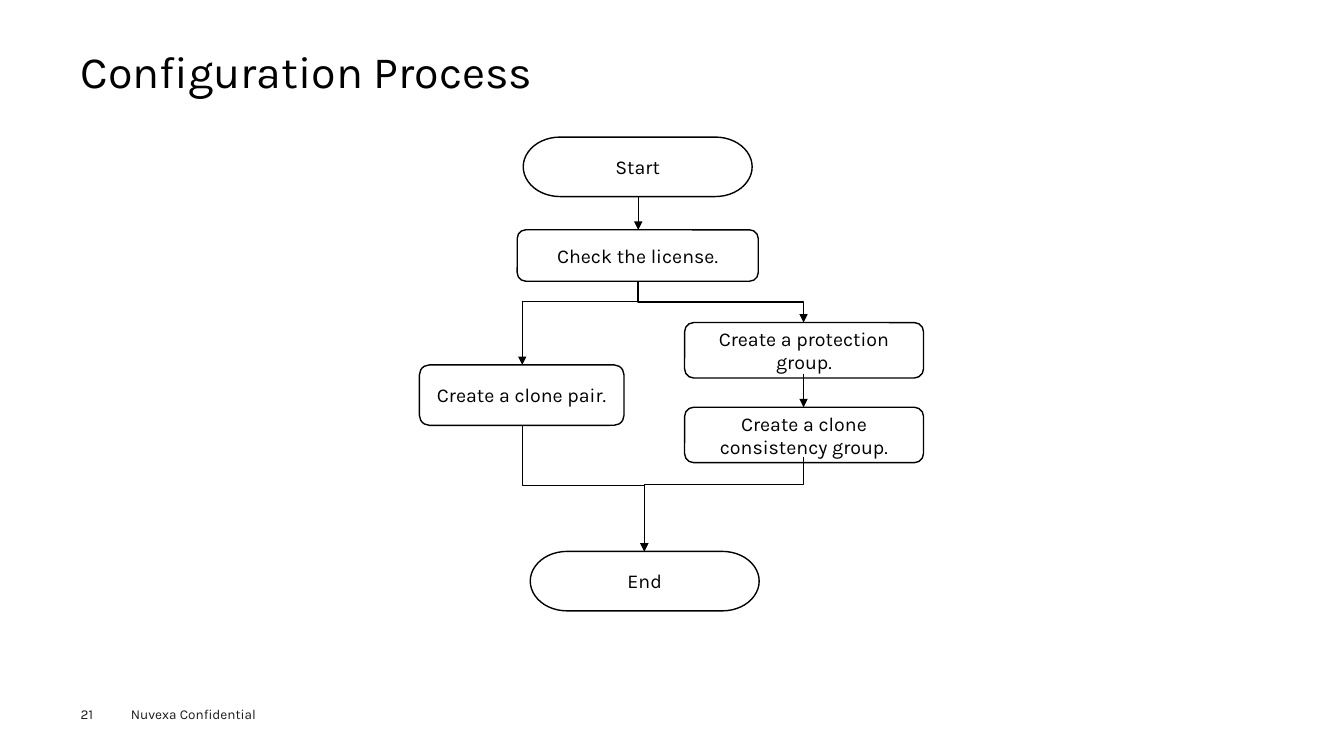
from lxml import etree
from pptx import Presentation
from pptx import util as u
from pptx.dml.color import RGBColor
from pptx.enum import shapes, text
from pptx.oxml import ns

PX = 9144
BLACK = RGBColor(0x00, 0x00, 0x00)
INK = RGBColor(0x1D, 0x1D, 0x1B)

prs = Presentation()
prs.slide_width, prs.slide_height = 1333 * PX, 750 * PX
s = prs.slides.add_slide(prs.slide_layouts[6])


def write(sp, words, size, color, **frame):
    tf = sp.text_frame
    tf.word_wrap = True
    for name, value in frame.items():
        setattr(tf, name, value)
    p = tf.paragraphs[0]
    r = p.add_run()
    r.text = words
    for name, value in {"name": "Karla", "size": u.Pt(size)}.items():
        setattr(r.font, name, value)
    r.font.color.rgb = color
    return p


def connect(kind, *ends):
    c = s.shapes.add_connector(kind, *[u.Emu(int(v * PX)) for v in ends])
    c.line.color.rgb = BLACK
    c.line.width = u.Pt(1)
    spPr = c.element.spPr
    etree.SubElement(spPr.find(ns.qn("a:ln")), ns.qn("a:tailEnd"), type="triangle")
    etree.SubElement(spPr, ns.qn("a:effectLst"))
    return spPr


FLUSH = dict.fromkeys(("margin_left", "margin_top", "margin_right", "margin_bottom"), 0)
labels = [
    (120, 695, 160, 27, "Nuvexa Confidential", 9.7, INK, {}),
    (80, 700, 55, 16, "21", 9.7, INK, FLUSH),
    (80, 49, 1173, 54, "Configuration Process", 32, BLACK, FLUSH),
]
for x, y, w, h, words, size, color, frame in labels:
    sp = s.shapes.add_textbox(x * PX, y * PX, w * PX, h * PX)
    p = write(sp, words, size, color, **frame)
p.line_spacing = 0.9

STEP = shapes.MSO_SHAPE.ROUNDED_RECTANGLE
TERMINAL = shapes.MSO_SHAPE.FLOWCHART_TERMINATOR
nodes = [
    (TERMINAL, 519, 136, 227, 59, "Start"),
    (STEP, 513, 228, 239, 51, "Check the license."),
    (STEP, 416, 362, 203, 60, "Create a clone pair."),
    (STEP, 679, 320, 237, 55, "Create a protection group."),
    (STEP, 679, 404, 237, 55, "Create a clone consistency group."),
    (TERMINAL, 526, 547, 227, 59, "End"),
]
for kind, x, y, w, h, words in nodes:
    sp = s.shapes.add_shape(kind, x * PX, y * PX, w * PX, h * PX)
    sp.shadow.inherit = False
    sp.fill.background()
    sp.line.color.rgb = BLACK
    sp.line.width = u.Pt(1)
    p = write(sp, words, 14, BLACK, vertical_anchor=text.MSO_ANCHOR.MIDDLE)
    p.alignment = text.PP_ALIGN.CENTER

STRAIGHT = shapes.MSO_CONNECTOR.STRAIGHT
ELBOW = shapes.MSO_CONNECTOR.ELBOW
for x, top, bottom in [(633, 195, 228), (797, 371, 404)]:
    connect(STRAIGHT, x, top, x, bottom)

corner = connect(ELBOW, 633, 299, 518, 362)
corner.find(ns.qn("a:prstGeom")).set("prst", "bentConnector2")

elbows = [
    (633, 279, 797, 320, 50000),
    (518, 422, 639, 547, 47800),
    (797, 453, 639, 547, 29500),
]
for x1, y1, x2, y2, bend in elbows:
    cx, cy = (x1 + x2) / 2, (y1 + y2) / 2
    rightward = x2 > x1
    half_w = (y2 - y1) / 2 * (1 if rightward else -1)
    half_h = abs(x2 - x1) / 2
    spPr = connect(ELBOW, cx + half_w, cy - half_h, cx - half_w, cy + half_h)
    spPr.find(ns.qn("a:xfrm")).set("rot", str((270 if rightward else 90) * 60000))
    guides = spPr.find(ns.qn("a:prstGeom")).find(ns.qn("a:avLst"))
    etree.SubElement(guides, ns.qn("a:gd"), name="adj1", fmla=f"val {bend}")

prs.save("out.pptx")
